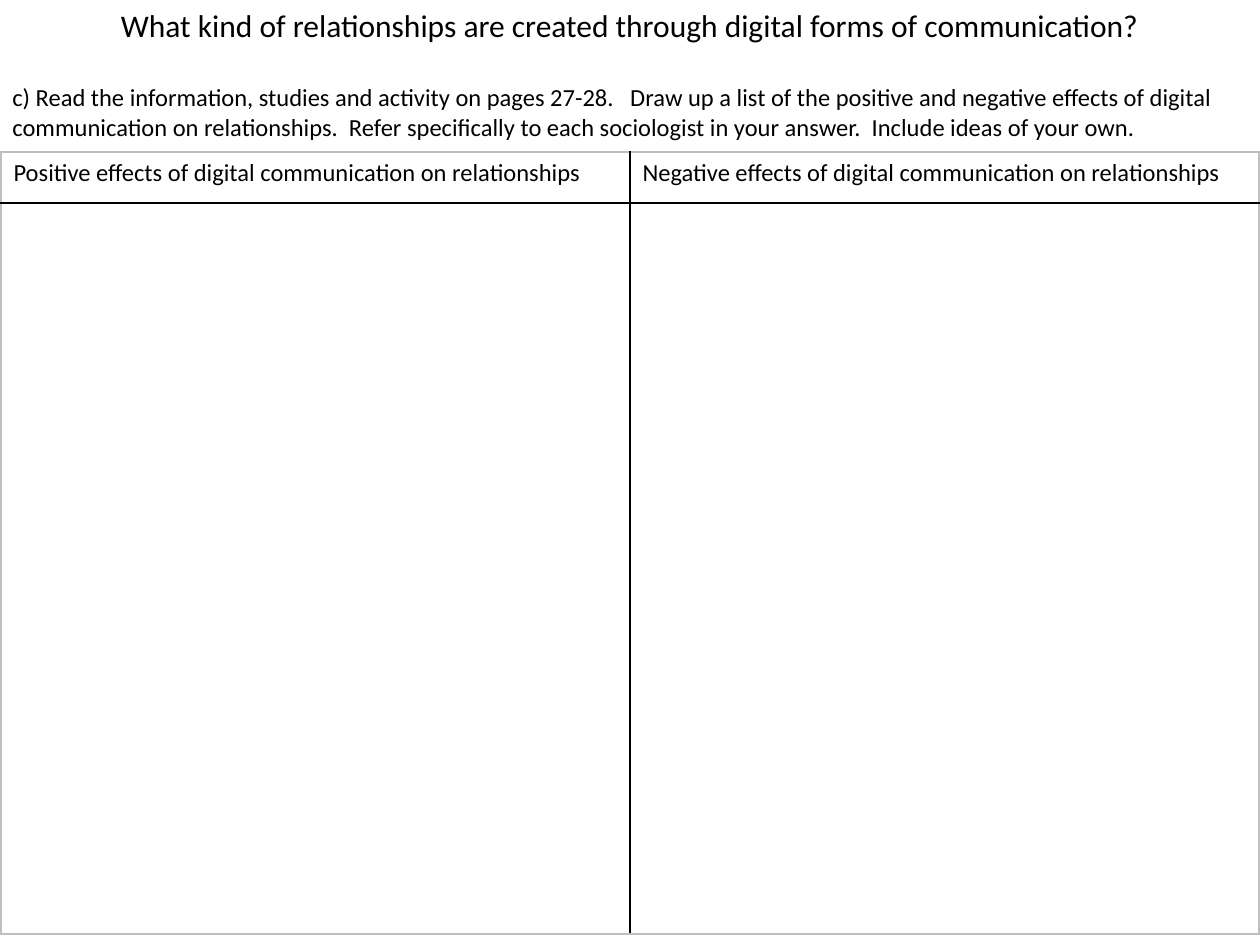
from dataclasses import dataclass
from lxml.etree import SubElement
from pptx import Presentation
from pptx.dml.color import RGBColor
from pptx.enum.text import MSO_ANCHOR, MSO_AUTO_SIZE, PP_ALIGN
from pptx.oxml.ns import qn
from pptx.util import Emu, Pt


@dataclass(frozen=True)
class Theme:
    font: str = "Calibri"
    ink: str = "000000"
    edge: str = "BFBFBF"
    paper: str = "FFFFFF"
    head: int = 18
    text: int = 14
    line: float = 1


THEME = Theme()
HEADS = [
    "Positive effects of digital communication on relationships",
    "Negative effects of digital communication on relationships",
]


def px(count):
    return Emu(round(count * 914400 / 126))


def write(frame, text, size=THEME.text, color=THEME.ink, align=PP_ALIGN.LEFT):
    frame.word_wrap = True
    para = frame.paragraphs[0]
    para.alignment = align
    run = para.add_run()
    run.text = text
    run.font.size = Pt(size)
    run.font.name = THEME.font
    run.font.color.rgb = RGBColor.from_string(color)


def rule(cell, side, color):
    line = SubElement(cell._tc.get_or_add_tcPr(), qn(f"a:ln{side}"),
                      w=str(Pt(THEME.line)))
    fill = SubElement(line, qn("a:solidFill"))
    SubElement(fill, qn("a:srgbClr"), val=color)


def add_title(slide, left, top, width, height):
    title = slide.shapes.title
    title.left, title.top = px(left), px(top)
    title.width, title.height = px(width), px(height)
    frame = title.text_frame
    frame.auto_size = MSO_AUTO_SIZE.SHAPE_TO_FIT_TEXT
    frame.vertical_anchor = MSO_ANCHOR.TOP
    write(frame, "What kind of relationships are created through digital "
          "forms of communication?", size=THEME.head, align=PP_ALIGN.CENTER)


def add_task(slide, left, top, width, height):
    box = slide.shapes.add_textbox(px(left), px(top), px(width), px(height))
    box.text_frame.auto_size = MSO_AUTO_SIZE.SHAPE_TO_FIT_TEXT
    write(box.text_frame,
          "c) Read the information, studies and activity on pages 27-28.   "
          "Draw up a list of the positive and negative effects of digital "
          "communication on relationships.  Refer specifically to each "
          "sociologist in your answer.  Include ideas of your own.")


def add_grid(slide, left, top, width, height, head):
    table = slide.shapes.add_table(
        2, len(HEADS), px(left), px(top), px(width), px(height)).table
    table.rows[0].height = px(head)
    table.rows[1].height = px(height - head)
    last = len(HEADS) - 1
    for row in range(2):
        for col, text in enumerate(HEADS):
            cell = table.cell(row, col)
            rule(cell, "L", THEME.edge if col == 0 else THEME.ink)
            rule(cell, "R", THEME.edge if col == last else THEME.ink)
            rule(cell, "T", THEME.edge if row == 0 else THEME.ink)
            rule(cell, "B", THEME.edge if row == 1 else THEME.ink)
            cell.fill.solid()
            cell.fill.fore_color.rgb = RGBColor.from_string(THEME.paper)
            if row == 0:
                write(cell.text_frame, text)


def main():
    deck = Presentation()
    deck.slide_width, deck.slide_height = px(1260), px(945)
    slide = deck.slides.add_slide(deck.slide_layouts[5])
    add_title(slide, 0, 0, 1260, 50)
    add_task(slide, 0, 76, 1260, 72)
    add_grid(slide, 1, 152, 1258, 782, head=51)
    deck.save("out.pptx")


if __name__ == "__main__":
    main()
